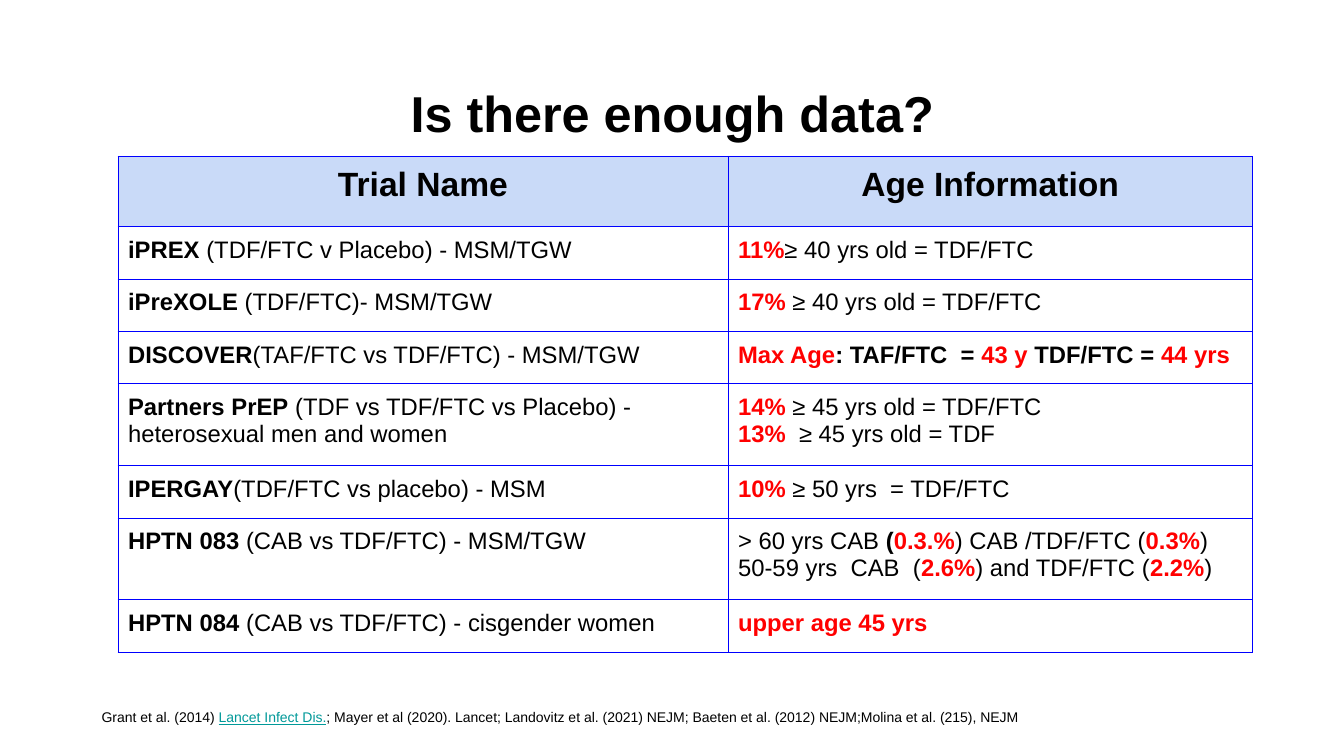
from dataclasses import dataclass

from lxml import etree
from pptx import Presentation
from pptx.dml.color import RGBColor
from pptx.enum.text import MSO_ANCHOR, PP_ALIGN
from pptx.oxml.ns import qn
from pptx.util import Inches, Pt


@dataclass(frozen=True)
class Theme:
    font: str = "Arial"
    ink: str = "000000"
    accent: str = "FF0000"
    link: str = "009999"
    border: str = "0000FF"
    header_fill: str = "C9DAF8"
    title_size: int = 36
    header_size: int = 24
    body_size: int = 17
    citation_size: int = 10
    border_width: float = 0.75


THEME = Theme()
PLAIN, BOLD, RED, LINK = "plain", "bold", "red", "link"

# Each text is a list of lines; each line is a list of (words, style).
TITLE = [[("Is there enough data?", BOLD)]]
HEADERS = [[[("Trial Name", BOLD)]], [[("Age Information", BOLD)]]]
TRIALS = [
    ([[("iPREX ", BOLD), ("(TDF/FTC v Placebo) - MSM/TGW", PLAIN)]],
     [[("11%", RED), ("≥ 40 yrs old = TDF/FTC", PLAIN)]]),
    ([[("iPreXOLE", BOLD), (" (TDF/FTC)- MSM/TGW", PLAIN)]],
     [[("17%", RED), (" ≥ 40 yrs old = TDF/FTC", PLAIN)]]),
    ([[("DISCOVER", BOLD), ("(TAF/FTC vs TDF/FTC) - MSM/TGW", PLAIN)]],
     [[("Max Age", RED), (": TAF/FTC  = ", BOLD), ("43 y", RED),
       (" TDF/FTC = ", BOLD), ("44 yrs", RED)]]),
    ([[("Partners PrEP", BOLD),
       (" (TDF vs TDF/FTC vs Placebo) - heterosexual men and women", PLAIN)]],
     [[("14% ", RED), ("≥ 45 yrs old = TDF/FTC", PLAIN)],
      [("13%", RED), ("  ≥ 45 yrs old = TDF", PLAIN)]]),
    ([[("IPERGAY", BOLD), ("(TDF/FTC vs placebo) - MSM", PLAIN)]],
     [[("10%", RED), (" ≥ 50 yrs  = TDF/FTC", PLAIN)]]),
    ([[("HPTN 083", BOLD), (" (CAB vs TDF/FTC) - MSM/TGW", PLAIN)]],
     [[("> 60 yrs CAB ", PLAIN), ("(", BOLD), ("0.3.%", RED),
       (") CAB /TDF/FTC (", PLAIN), ("0.3%", RED), (")", PLAIN)],
      [("50-59 yrs  CAB  (", PLAIN), ("2.6%", RED),
       (") and TDF/FTC (", PLAIN), ("2.2%", RED), (")", PLAIN)]]),
    ([[("HPTN 084 ", BOLD), ("(CAB vs TDF/FTC) - cisgender women", PLAIN)]],
     [[("upper age 45 yrs", RED)]]),
]
CITATIONS = [[
    ("Grant et al. (2014) ", PLAIN), ("Lancet Infect Dis.", LINK),
    ("; Mayer et al (2020). Lancet; Landovitz et al. (2021) NEJM; "
     "Baeten et al. (2012) NEJM;Molina et al. (215), NEJM", PLAIN),
]]

COLUMN_WIDTHS = (6.05, 5.2)
HEADER_HEIGHT = 0.7
ROW_HEIGHTS = {1: 0.52, 2: 0.81}  # by number of lines in the age column
INSET = Inches(0.1)


def write(frame, lines, size, align=PP_ALIGN.LEFT):
    colours = {RED: THEME.accent, LINK: THEME.link}
    for number, line in enumerate(lines):
        paragraph = frame.add_paragraph() if number else frame.paragraphs[0]
        paragraph.alignment = align
        for words, style in line:
            run = paragraph.add_run()
            run.text = words
            font = run.font
            font.name, font.size = THEME.font, Pt(size)
            font.bold = style in (BOLD, RED)
            font.underline = style == LINK
            font.color.rgb = RGBColor.from_string(colours.get(style, THEME.ink))


def set_insets(holder):
    holder.margin_left = holder.margin_right = INSET
    holder.margin_top = holder.margin_bottom = INSET


def add_borders(cell):
    properties = cell._tc.get_or_add_tcPr()
    for side in ("a:lnL", "a:lnR", "a:lnT", "a:lnB"):
        line = etree.SubElement(properties, qn(side), w=str(Pt(THEME.border_width)))
        fill = etree.SubElement(line, qn("a:solidFill"))
        etree.SubElement(fill, qn("a:srgbClr"), val=THEME.border)


def add_title(slide):
    title = slide.shapes.title
    title.left, title.top = Inches(0.67), Inches(0.67)
    title.width, title.height = Inches(12), Inches(0.88)
    frame = title.text_frame
    set_insets(frame)
    frame.vertical_anchor = MSO_ANCHOR.MIDDLE
    write(frame, TITLE, THEME.title_size, PP_ALIGN.CENTER)


def add_trial_table(slide):
    heights = [HEADER_HEIGHT] + [ROW_HEIGHTS[len(age)] for _, age in TRIALS]
    table = slide.shapes.add_table(
        len(heights), len(COLUMN_WIDTHS), Inches(1.17), Inches(1.55),
        Inches(sum(COLUMN_WIDTHS)), Inches(sum(heights))).table
    table.horz_banding = False
    for column, width in zip(table.columns, COLUMN_WIDTHS):
        column.width = Inches(width)
    for row, height in zip(table.rows, heights):
        row.height = Inches(height)

    for row_number, contents in enumerate([HEADERS, *TRIALS]):
        for column_number, lines in enumerate(contents):
            cell = table.cell(row_number, column_number)
            set_insets(cell)
            add_borders(cell)
            if row_number == 0:
                cell.fill.solid()
                cell.fill.fore_color.rgb = RGBColor.from_string(THEME.header_fill)
                write(cell.text_frame, lines, THEME.header_size, PP_ALIGN.CENTER)
            else:
                cell.fill.background()
                write(cell.text_frame, lines, THEME.body_size)


def add_citations(slide):
    frame = slide.shapes.add_textbox(
        Inches(0.91), Inches(6.95), Inches(10.73), Inches(0.37)).text_frame
    frame.word_wrap = True
    set_insets(frame)
    write(frame, CITATIONS, THEME.citation_size)


def main():
    deck = Presentation()
    deck.slide_width, deck.slide_height = Inches(13.33), Inches(7.5)
    slide = deck.slides.add_slide(deck.slide_layouts[5])
    add_title(slide)
    add_trial_table(slide)
    add_citations(slide)
    deck.save("out.pptx")


if __name__ == "__main__":
    main()
